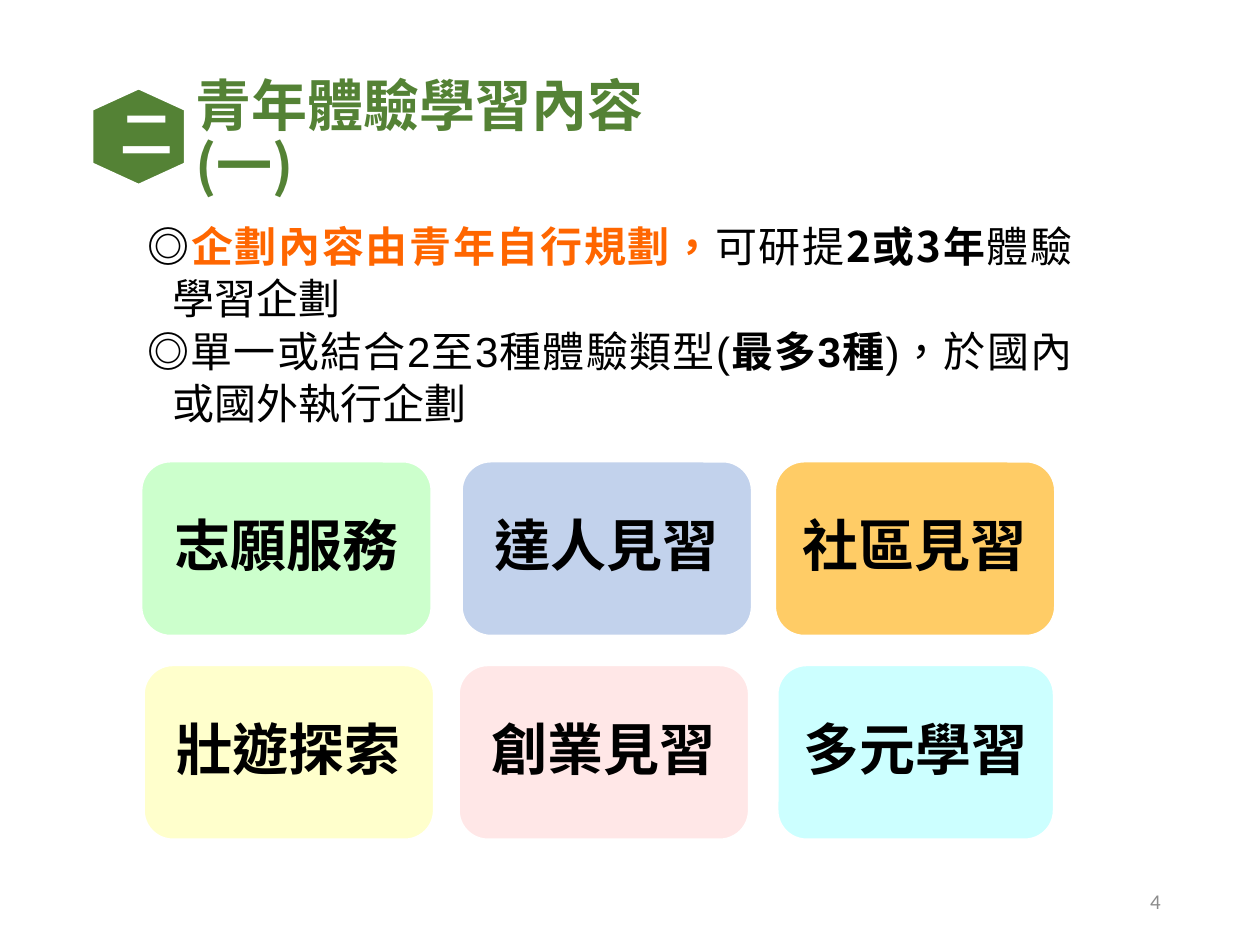
from dataclasses import dataclass

import lxml.etree
import pptx
import pptx.dml.color
import pptx.enum.shapes
import pptx.enum.text
import pptx.oxml.ns
import pptx.util

Pt = pptx.util.Pt
Align = pptx.enum.text.PP_ALIGN
Anchor = pptx.enum.text.MSO_ANCHOR


@dataclass(frozen=True)
class Theme:
    cjk: str = "Noto Sans CJK SC"
    latin: str = "Arial"
    number_font: str = "Calibri"
    green: str = "548235"
    orange: str = "FF6600"
    black: str = "000000"
    white: str = "FFFFFF"
    grey: str = "8C8C8C"
    heading: int = 32
    badge: int = 30
    body: int = 24
    number: int = 12


THEME = Theme()

BODY = [
    [
        ("◎", THEME.cjk, THEME.orange, True),
        ("企劃內容", THEME.cjk, THEME.orange, True),
        ("由", THEME.latin, THEME.orange, True),
        ("青年自行規劃，", THEME.cjk, THEME.orange, True),
        ("可研提", THEME.cjk, THEME.black, False),
        ("2或3年", THEME.cjk, THEME.black, True),
        ("體驗學習企劃", THEME.cjk, THEME.black, False),
    ],
    [
        ("◎", THEME.cjk, THEME.black, True),
        ("單一", THEME.cjk, THEME.black, False),
        ("或結合2至3種體驗類型(", THEME.latin, THEME.black, False),
        ("最多3種", THEME.latin, THEME.black, True),
        (")，於國內或國外執行企劃", THEME.latin, THEME.black, False),
    ],
]
BODY[0][0] = ("◎", THEME.cjk, THEME.black, True)

TILE_ROWS = [
    (263.8, [
        ("志願服務", "CCFFCC", 80.9, 165.6),
        ("達人見習", "C2D2EC", 264, 165.6),
        ("社區見習", "FFCC66", 443, 159.8),
    ]),
    (380.2, [
        ("壯遊探索", "FFFFCC", 82.3, 165.6),
        ("創業見習", "FFE7E7", 262.3, 165.6),
        ("多元學習", "CCFFFF", 444.4, 157.7),
    ]),
]
TILE_HEIGHT = 99.4


def rgb(value):
    return pptx.dml.color.RGBColor.from_string(value)


def add_run(paragraph, text, font, size, color, bold):
    run = paragraph.add_run()
    run.text = text
    run.font.name = font
    run.font.size = Pt(size)
    run.font.bold = bold
    run.font.color.rgb = rgb(color)
    properties = run._r.get_or_add_rPr()
    properties.set("lang", "zh-TW")
    east_asian = lxml.etree.Element(pptx.oxml.ns.qn("a:ea"), typeface=THEME.cjk)
    properties.find(pptx.oxml.ns.qn("a:latin")).addnext(east_asian)


def set_frame(shape, horizontal, vertical, anchor=Anchor.MIDDLE):
    frame = shape.text_frame
    frame.word_wrap = True
    frame.vertical_anchor = anchor
    frame.margin_left = frame.margin_right = Pt(horizontal)
    frame.margin_top = frame.margin_bottom = Pt(vertical)
    return frame


def add_label(frame, text, size, color, align, font=THEME.cjk, bold=True, spacing=0.9):
    paragraph = frame.paragraphs[0]
    paragraph.alignment = align
    paragraph.line_spacing = spacing
    add_run(paragraph, text, font, size, color, bold)


def style_shape(shape, fill, line_width):
    shape.shadow.inherit = False
    shape.fill.solid()
    shape.fill.fore_color.rgb = rgb(fill)
    shape.line.color.rgb = rgb(THEME.white)
    shape.line.width = Pt(line_width)


def add_textbox(slide, left, top, width, height):
    return slide.shapes.add_textbox(Pt(left), Pt(top), Pt(width), Pt(height))


def add_badge(slide, left, top, width, height):
    middle, right = left + width / 2, left + width
    shoulder, hip = top + height * 0.22, top + height * 0.78
    corners = [(right, shoulder), (right, hip), (middle, top + height),
               (left, hip), (left, shoulder)]
    builder = slide.shapes.build_freeform(Pt(middle), Pt(top))
    builder.add_line_segments([(Pt(x), Pt(y)) for x, y in corners], close=True)
    hexagon = builder.convert_to_shape()
    style_shape(hexagon, THEME.green, 1.5)
    add_label(set_frame(hexagon, 16, 17), "二", THEME.badge, THEME.white, Align.CENTER)


def add_header(slide, left, top, width, height):
    add_badge(slide, left, top, 53.2, 55.4)
    title = add_textbox(slide, left + 55.4, top + 3.6, width - 55.4, height - 5)
    add_label(set_frame(title, 3.6, 3.6), "青年體驗學習內容(一)",
              THEME.heading, THEME.green, Align.LEFT)


def add_body(slide, left, top, width, height):
    frame = set_frame(add_textbox(slide, left, top, width, height), 5, 3, Anchor.TOP)
    for index, runs in enumerate(BODY):
        paragraph = frame.add_paragraph() if index else frame.paragraphs[0]
        paragraph.alignment = Align.JUSTIFY
        paragraph.line_spacing = Pt(30)
        properties = paragraph._p.get_or_add_pPr()
        properties.set("marL", str(Pt(14.4)))
        properties.set("indent", str(Pt(-14.4)))
        for text, font, color, bold in runs:
            add_run(paragraph, text, font, THEME.body, color, bold)


def add_tile(slide, left, top, width, height, text, fill):
    tile = slide.shapes.add_shape(
        pptx.enum.shapes.MSO_SHAPE.ROUNDED_RECTANGLE,
        Pt(left), Pt(top), Pt(width), Pt(height))
    style_shape(tile, fill, 1)
    add_label(set_frame(tile, 7, 9), text, THEME.heading, THEME.black, Align.CENTER)


def add_page_number(slide, left, top, width, height):
    frame = set_frame(add_textbox(slide, left, top, width, height), 7.2, 3.6)
    add_label(frame, "4", THEME.number, THEME.grey, Align.RIGHT,
              THEME.number_font, False, 1.0)


def main():
    presentation = pptx.Presentation()
    presentation.slide_width, presentation.slide_height = Pt(720), Pt(540)
    slide = presentation.slides.add_slide(presentation.slide_layouts[6])
    add_body(slide, 79.2, 121.7, 538.6, 126.7)
    add_header(slide, 52.6, 50.4, 365.7, 55.4)
    for top, tiles in TILE_ROWS:
        for text, fill, left, width in tiles:
            add_tile(slide, left, top, width, TILE_HEIGHT, text, fill)
    add_page_number(slide, 508.3, 500.4, 162, 28.8)
    presentation.save("out.pptx")


if __name__ == "__main__":
    main()
